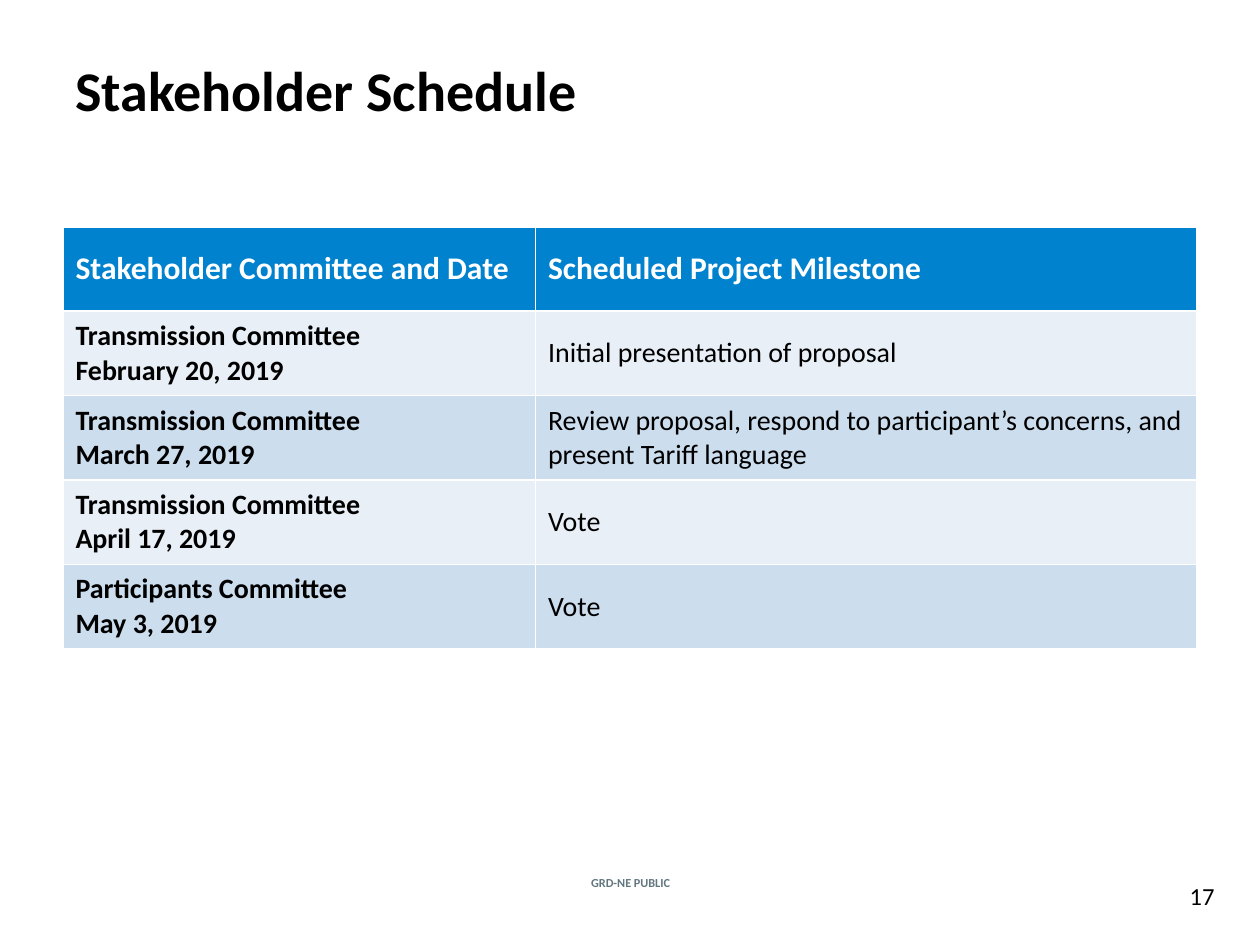
import pptx
import pptx.util
import pptx.dml.color
import pptx.enum.text
import pptx.oxml
from dataclasses import dataclass
from pptx.oxml.ns import nsdecls

Inches = pptx.util.Inches
Align = pptx.enum.text.PP_ALIGN
MIDDLE = pptx.enum.text.MSO_ANCHOR.MIDDLE


@dataclass
class Theme:
    face: str = "Calibri"
    ink: str = "000000"
    white: str = "FFFFFF"
    muted: str = "62777F"
    head: str = "0082CF"
    bands: tuple = ("E8EFF7", "CCDDEE")
    title: int = 32
    top: int = 18
    body: int = 16
    page: int = 14
    foot: int = 7


theme = Theme()


def write(frame, text, size, color, bold=False, align=Align.LEFT):
    frame.text = text
    frame.word_wrap = True
    for para in frame.paragraphs:
        para.alignment = align
        for run in para.runs:
            run.font.name = theme.face
            run.font.size = pptx.util.Pt(size)
            run.font.bold = bold
            run.font.color.rgb = pptx.dml.color.RGBColor.from_string(color)


def edge(cell, color):
    props = cell._tc.get_or_add_tcPr()
    for spot, side in enumerate(("lnL", "lnR", "lnT", "lnB")):
        line = pptx.oxml.parse_xml(
            f'<a:{side} {nsdecls("a")} w="12700"><a:solidFill>'
            f'<a:srgbClr val="{color}"/></a:solidFill></a:{side}>')
        props.insert(spot, line)


deck = pptx.Presentation()
deck.slide_width, deck.slide_height = Inches(10), Inches(7.5)
slide = deck.slides.add_slide(deck.slide_layouts[6])

# Title, footer and page number
labels = [
    ((0.5, 0.08, 9, 1.25), "Stakeholder Schedule", theme.title, theme.ink, True, Align.LEFT),
    ((4.27, 6.92, 1.47, 0.17), "GRD-NE PUBLIC", theme.foot, theme.muted, True, Align.CENTER),
    ((9.33, 6.96, 0.42, 0.29), "17", theme.page, theme.ink, False, Align.CENTER),
]
for place, text, size, color, bold, align in labels:
    box = slide.shapes.add_textbox(*map(Inches, place))
    frame = box.text_frame
    write(frame, text, size, color, bold, align)
    frame.vertical_anchor = MIDDLE
    if align == Align.CENTER:
        frame.margin_left = frame.margin_right = 0
        frame.margin_top = frame.margin_bottom = 0

# Schedule table
rows = [
    ("Stakeholder Committee and Date", "Scheduled Project Milestone"),
    ("Transmission Committee\nFebruary 20, 2019", "Initial presentation of proposal"),
    ("Transmission Committee\nMarch 27, 2019",
     "Review proposal, respond to participant’s concerns, and present Tariff language"),
    ("Transmission Committee\nApril 17, 2019", "Vote"),
    ("Participants Committee\nMay 3, 2019", "Vote"),
]
high = 0.67
table = slide.shapes.add_table(
    len(rows), 2, Inches(0.5), Inches(1.8), Inches(9), Inches(high * len(rows))).table
for col, wide in zip(table.columns, (3.75, 5.25)):
    col.width = Inches(wide)

for r, row in enumerate(rows):
    table.rows[r].height = Inches(high)
    first = r == 0
    fill = theme.head if first else theme.bands[(r - 1) % 2]
    size = theme.top if first else theme.body
    color = theme.white if first else theme.ink
    for c, text in enumerate(row):
        cell = table.cell(r, c)
        write(cell.text_frame, text, size, color, first or c == 0)
        cell.vertical_anchor = MIDDLE
        cell.fill.solid()
        cell.fill.fore_color.rgb = pptx.dml.color.RGBColor.from_string(fill)
        edge(cell, theme.white)

deck.save("out.pptx")
